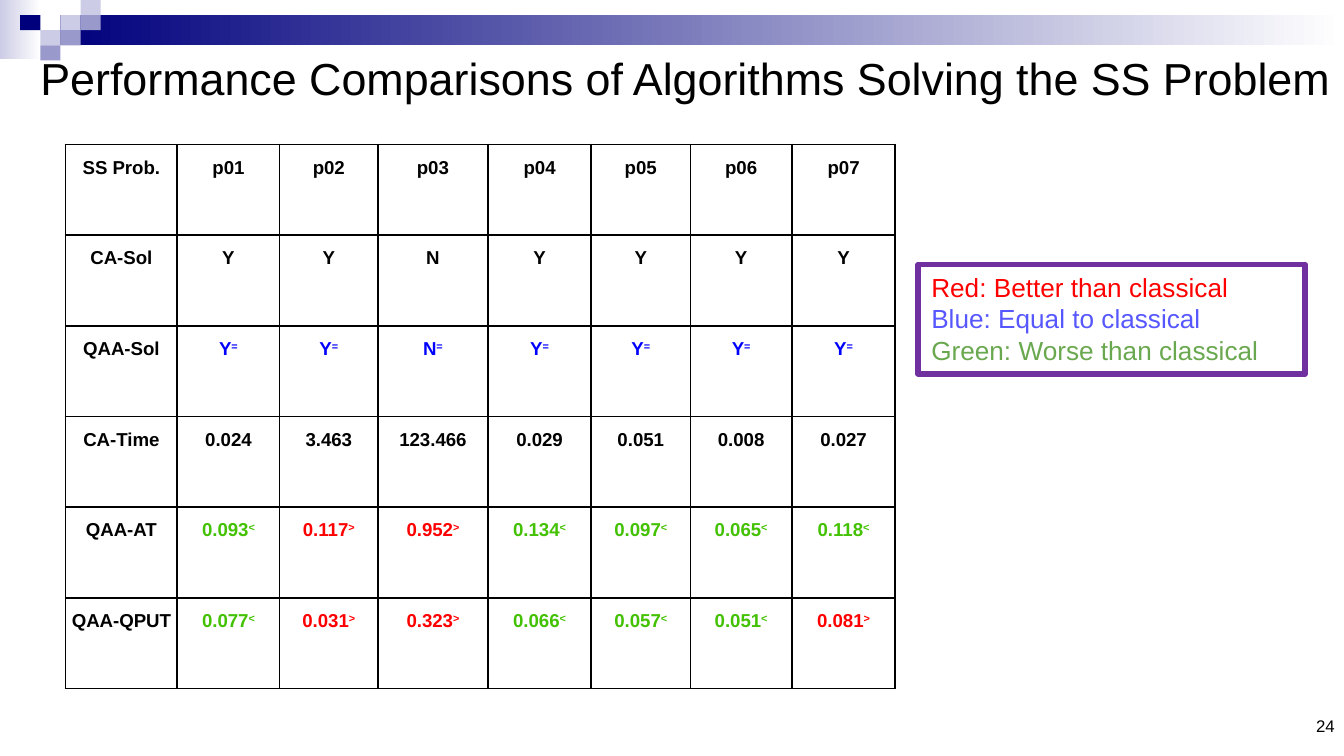
from dataclasses import dataclass
from typing import NamedTuple, Optional

import pptx
import pptx.dml.color
import pptx.enum.shapes
import pptx.enum.text
import pptx.oxml
import pptx.oxml.ns
import pptx.util

ALIGN = pptx.enum.text.PP_ALIGN
ANCHOR = pptx.enum.text.MSO_ANCHOR
PX = 5715  # EMU in one px, 160 px to the inch


@dataclass(frozen=True)
class Theme:
    font: str = "Arial"
    ink: str = "000000"
    navy: str = "00007D"
    mid: str = "9999CC"
    pale: str = "CCCCE6"
    white: str = "FFFFFF"
    frame: str = "7030A0"
    better: str = "FF0000"
    equal: str = "0000FF"
    worse: str = "43C103"
    legend_equal: str = "5757FF"
    legend_worse: str = "6AA84F"
    title_size: int = 24
    legend_size: int = 14
    table_size: int = 10
    number_size: int = 9


class Box(NamedTuple):
    left: int
    top: int
    width: int
    height: int


class Block(NamedTuple):
    box: Box
    color: str
    fade_to: Optional[str] = None


THEME = Theme()

# Two fading bars, then tiles given as column, row and colour
TILE_WIDTH, TILE_HEIGHT = 24, 18
BARS = [
    Block(Box(0, 0, 49, 70), THEME.pale, THEME.white),
    Block(Box(72, 18, 1528, 36), THEME.navy, THEME.white),
]
TILES = [
    (3, 1, THEME.pale), (4, 0, THEME.pale), (4, 1, THEME.mid),
    (2, 2, THEME.pale), (1, 1, THEME.navy), (3, 2, THEME.mid),
    (2, 3, THEME.mid),
]

# A trailing mark compares the value with the classical algorithm
MARK_COLORS = {"=": THEME.equal, ">": THEME.better, "<": THEME.worse}
RESULTS = [
    "SS Prob.|p01|p02|p03|p04|p05|p06|p07",
    "CA-Sol|Y|Y|N|Y|Y|Y|Y",
    "QAA-Sol|Y=|Y=|N=|Y=|Y=|Y=|Y=",
    "CA-Time|0.024|3.463|123.466|0.029|0.051|0.008|0.027",
    "QAA-AT|0.093<|0.117>|0.952>|0.134<|0.097<|0.065<|0.118<",
    "QAA-QPUT|0.077<|0.031>|0.323>|0.066<|0.057<|0.051<|0.081>",
]
COLUMN_WIDTHS = [133, 122, 117, 131, 123, 118, 121, 123]
ROW_HEIGHT = 108

LEGEND = [
    ("Red: Better than classical", THEME.better),
    ("Blue: Equal to classical", THEME.legend_equal),
    ("Green: Worse than classical", THEME.legend_worse),
]


def rgb(color: str) -> pptx.dml.color.RGBColor:
    return pptx.dml.color.RGBColor.from_string(color)


def emu(box: Box) -> list[int]:
    return [length * PX for length in box]


def add_text(para, text: str, *, size: int, color: str = THEME.ink,
             bold: bool = False, raised: bool = False, align=ALIGN.LEFT) -> None:
    """Append one formatted span to a paragraph."""
    para.alignment = align
    span = para.add_run()
    span.text = text
    span.font.name = THEME.font
    span.font.size = pptx.util.Pt(size)
    span.font.bold = bold
    span.font.color.rgb = rgb(color)
    if raised:
        span._r.get_or_add_rPr().set("baseline", "30000")


def set_frame(frame, anchor, across: int, down: int) -> None:
    frame.word_wrap = True
    frame.auto_size = pptx.enum.text.MSO_AUTO_SIZE.NONE
    frame.vertical_anchor = anchor
    frame.margin_left = frame.margin_right = across * PX
    frame.margin_top = frame.margin_bottom = down * PX


def add_rectangle(page, box: Box):
    shape = page.shapes.add_shape(
        pptx.enum.shapes.MSO_SHAPE.RECTANGLE, *emu(box))
    shape.shadow.inherit = False
    return shape


def add_block(page, block: Block) -> None:
    shape = add_rectangle(page, block.box)
    shape.line.fill.background()
    if block.fade_to:
        shape.fill.gradient()
        shape.fill.gradient_angle = 0
        for stop, color in zip(shape.fill.gradient_stops,
                               (block.color, block.fade_to)):
            stop.color.rgb = rgb(color)
    else:
        shape.fill.solid()
        shape.fill.fore_color.rgb = rgb(block.color)


def add_banner(page) -> None:
    for bar in BARS:
        add_block(page, bar)
    for column, row, color in TILES:
        add_block(page, Block(Box(column * TILE_WIDTH, row * TILE_HEIGHT,
                                  TILE_WIDTH, TILE_HEIGHT), color))


def add_title(page, text: str, box: Box) -> None:
    title = page.shapes.title
    title.left, title.top, title.width, title.height = emu(box)
    set_frame(title.text_frame, ANCHOR.MIDDLE, 11, 6)
    add_text(title.text_frame.paragraphs[0], text, size=THEME.title_size)


def add_page_number(page, text: str, box: Box) -> None:
    frame = page.shapes.add_textbox(*emu(box)).text_frame
    set_frame(frame, ANCHOR.BOTTOM, 11, 6)
    add_text(frame.paragraphs[0], text, size=THEME.number_size,
             align=ALIGN.RIGHT)


def add_legend(page, box: Box) -> None:
    shape = add_rectangle(page, box)
    shape.fill.background()
    shape.line.color.rgb = rgb(THEME.frame)
    shape.line.width = pptx.util.Pt(3)
    frame = shape.text_frame
    set_frame(frame, ANCHOR.TOP, 16, 8)
    for index, (text, color) in enumerate(LEGEND):
        para = frame.add_paragraph() if index else frame.paragraphs[0]
        add_text(para, text, size=THEME.legend_size, color=color)


def add_borders(cell) -> None:
    properties = cell._tc.get_or_add_tcPr()
    for index, side in enumerate(("lnL", "lnR", "lnT", "lnB")):
        properties.insert(index, pptx.oxml.parse_xml(
            f'<a:{side} {pptx.oxml.ns.nsdecls("a")} w="12700"><a:solidFill>'
            f'<a:srgbClr val="{THEME.ink}"/></a:solidFill></a:{side}>'))


def fill_cell(cell, entry: str) -> None:
    cell.fill.background()
    add_borders(cell)
    cell.vertical_anchor = ANCHOR.TOP
    cell.margin_left = cell.margin_right = 3 * PX
    cell.margin_top = cell.margin_bottom = 3 * PX
    para = cell.text_frame.paragraphs[0]
    para.line_spacing = 1.5
    para.space_after = pptx.util.Pt(12)
    value, mark = entry.rstrip("=<>"), entry[-1]
    style = dict(size=THEME.table_size, bold=True, align=ALIGN.CENTER,
                 color=MARK_COLORS.get(mark, THEME.ink))
    add_text(para, value, **style)
    if mark in MARK_COLORS:
        add_text(para, mark, raised=True, **style)


def add_results(page, left: int, top: int) -> None:
    box = Box(left, top, sum(COLUMN_WIDTHS), ROW_HEIGHT * len(RESULTS))
    table = page.shapes.add_table(
        len(RESULTS), len(COLUMN_WIDTHS), *emu(box)).table
    table.first_row = table.horz_banding = False
    for column, width in zip(table.columns, COLUMN_WIDTHS):
        column.width = width * PX
    for row, line in zip(table.rows, RESULTS):
        row.height = ROW_HEIGHT * PX
        for cell, entry in zip(row.cells, line.split("|")):
            fill_cell(cell, entry)


def main() -> None:
    deck = pptx.Presentation()
    deck.slide_width, deck.slide_height = 1600 * PX, 900 * PX
    page = deck.slides.add_slide(deck.slide_layouts[5])

    # Banner, title and page number
    add_banner(page)
    add_title(page, "Performance Comparisons of Algorithms Solving the SS Problem",
              Box(37, 51, 1600, 82))
    add_page_number(page, "24", Box(1227, 850, 373, 32))

    # Results and their colour key
    add_legend(page, Box(1093, 315, 461, 130))
    add_results(page, 78, 172)

    deck.save("out.pptx")


if __name__ == "__main__":
    main()
